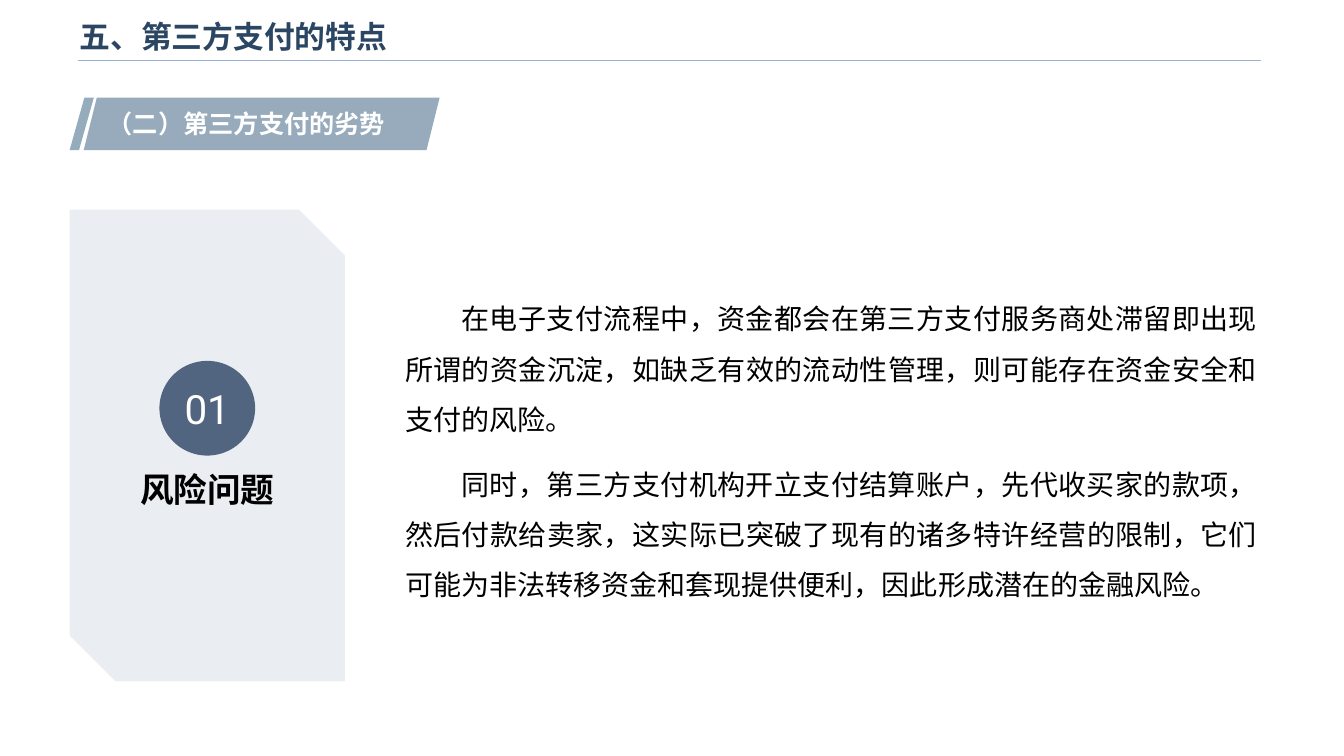
import lxml.etree
import pptx
import pptx.dml.color
import pptx.enum.shapes
import pptx.enum.text
import pptx.oxml.ns
import pptx.util

RGB = pptx.dml.color.RGBColor
NAVY = RGB(0x2B, 0x46, 0x63)
RULE_BLUE = RGB(0x98, 0xB4, 0xD2)
STRIPE_BLUE = RGB(0x94, 0xAC, 0xBC)
BANNER_BLUE = RGB(0x97, 0xAB, 0xBD)
CARD_GREY = RGB(0xEA, 0xEE, 0xF2)
BADGE_BLUE = RGB(0x52, 0x65, 0x80)
WHITE = RGB(0xFF, 0xFF, 0xFF)
BLACK = RGB(0, 0, 0)

CJK = "Noto Sans CJK SC"
SHAPE = pptx.enum.shapes.MSO_SHAPE
ALIGN = pptx.enum.text.PP_ALIGN
ANCHOR = pptx.enum.text.MSO_ANCHOR
AUTO_SIZE = pptx.enum.text.MSO_AUTO_SIZE

WIDTH = pptx.util.Inches(13.33)
HEIGHT = pptx.util.Inches(7.5)
COLUMN = WIDTH / 100
ROW = HEIGHT / 100

RISKS = (
    "在电子支付流程中，资金都会在第三方支付服务商处滞留即出现所谓的资金沉淀，"
    "如缺乏有效的流动性管理，则可能存在资金安全和支付的风险。",
    "同时，第三方支付机构开立支付结算账户，先代收买家的款项，然后付款给卖家，"
    "这实际已突破了现有的诸多特许经营的限制，它们可能为非法转移资金和套现提供便利，"
    "因此形成潜在的金融风险。",
)


def place(left, top, width, height):
    """Turn grid columns and rows into slide lengths."""
    return (round(left * COLUMN), round(top * ROW),
            round(width * COLUMN), round(height * ROW))


def write(holder, *texts, size, color, font=CJK, bold=False, align=ALIGN.LEFT,
          anchor=ANCHOR.TOP, auto_size=AUTO_SIZE.SHAPE_TO_FIT_TEXT,
          indent=None, line_spacing=None, space_after=None):
    """Fill a shape with one formatted paragraph per text."""
    frame = holder.text_frame
    frame.word_wrap = True
    frame.auto_size = auto_size
    frame.vertical_anchor = anchor
    for index, text in enumerate(texts):
        paragraph = frame.add_paragraph() if index else frame.paragraphs[0]
        paragraph.alignment = align
        paragraph.line_spacing = line_spacing
        paragraph.space_after = space_after
        if indent:
            paragraph._p.get_or_add_pPr().set("indent", str(indent))
        run = paragraph.add_run()
        run.text = text
        run.font.size = pptx.util.Pt(size)
        run.font.bold = bold
        run.font.color.rgb = color
        run.font.name = font
        east_asian = lxml.etree.SubElement(
            run._r.get_or_add_rPr(), pptx.oxml.ns.qn("a:ea"))
        east_asian.set("typeface", CJK)


def add_filled(shapes, kind, box, color, adjustment=None):
    """Add a flat preset shape without outline."""
    shape = shapes.add_shape(kind, *place(*box))
    shape.shadow.inherit = False
    shape.fill.solid()
    shape.fill.fore_color.rgb = color
    shape.line.fill.background()
    if adjustment is not None:
        shape.adjustments[0] = adjustment
    return shape


def add_heading(slide, left, top, width, height):
    """Place the title and the rule beneath it."""
    rule_left, rule_top, rule_width, _ = place(left + 0.6, 8, 88.05, 0)
    rule = slide.shapes.add_connector(
        pptx.enum.shapes.MSO_CONNECTOR.STRAIGHT,
        rule_left, rule_top, rule_left + rule_width, rule_top)
    rule.line.color.rgb = RULE_BLUE
    rule.line.width = pptx.util.Pt(1)
    lxml.etree.SubElement(rule._element.spPr, pptx.oxml.ns.qn("a:effectLst"))
    title = slide.shapes.title
    title.left, title.top, title.width, title.height = place(left, top, width, height)
    write(title, "五、第三方支付的特点", size=22, color=NAVY, font="Arial", bold=True,
          anchor=ANCHOR.MIDDLE, auto_size=AUTO_SIZE.NONE)


def add_banner(slide, left, top, width, height):
    """Draw the slanted section banner with its leading stripe."""
    banner = slide.shapes.add_group_shape().shapes
    add_filled(banner, SHAPE.PARALLELOGRAM, (left, top, 1.8, height),
               STRIPE_BLUE, 0.61)
    add_filled(banner, SHAPE.PARALLELOGRAM, (left + 1.05, top, width - 1.05, height),
               BANNER_BLUE, 0.25)
    section = slide.shapes.add_textbox(*place(left + 2.1, top + 0.8, 23.1, 5.33))
    write(section, "（二）第三方支付的劣势", size=18, color=WHITE, bold=True)


def add_risk_card(slide, left, top, width, height):
    """Draw the snipped card with its numbered badge and caption."""
    add_filled(slide.shapes, SHAPE.SNIP_2_DIAG_RECTANGLE,
               (left, top, width, height), CARD_GREY)
    center = left + width / 2
    caption_width, badge_width = 23.92, 7.12
    caption = slide.shapes.add_textbox(
        *place(center - caption_width / 2, top + 33.6, caption_width, 6.67))
    write(caption, "风险问题", size=24, color=BLACK, bold=True, align=ALIGN.CENTER)
    badge = add_filled(slide.shapes, SHAPE.OVAL,
                       (center - badge_width / 2, top + 20, badge_width, 12.53),
                       BADGE_BLUE)
    write(badge, "01", size=28.8, color=WHITE, font="Roboto", align=ALIGN.CENTER,
          anchor=ANCHOR.MIDDLE, auto_size=AUTO_SIZE.NONE)


def add_explanation(slide, left, top, width, height):
    """Place the justified paragraphs on the risks."""
    explanation = slide.shapes.add_textbox(*place(left, top, width, height))
    write(explanation, *RISKS, size=20, color=BLACK, align=ALIGN.JUSTIFY,
          indent=pptx.util.Inches(0.56), line_spacing=1.5,
          space_after=pptx.util.Pt(10))


def main():
    """Build the slide and save it."""
    deck = pptx.Presentation()
    deck.slide_width, deck.slide_height = WIDTH, HEIGHT
    slide = deck.slides.add_slide(deck.slide_layouts.get_by_name("Title Only"))
    margin = 5.18
    add_heading(slide, margin, 1.2, 80.33, 7.07)
    add_banner(slide, margin, 12.93, 27.53, 6.93)
    add_risk_card(slide, margin, 27.73, 20.48, 62.4)
    add_explanation(slide, 29.4, 37.07, 64.88, 43.6)
    deck.save("out.pptx")


if __name__ == "__main__":
    main()
